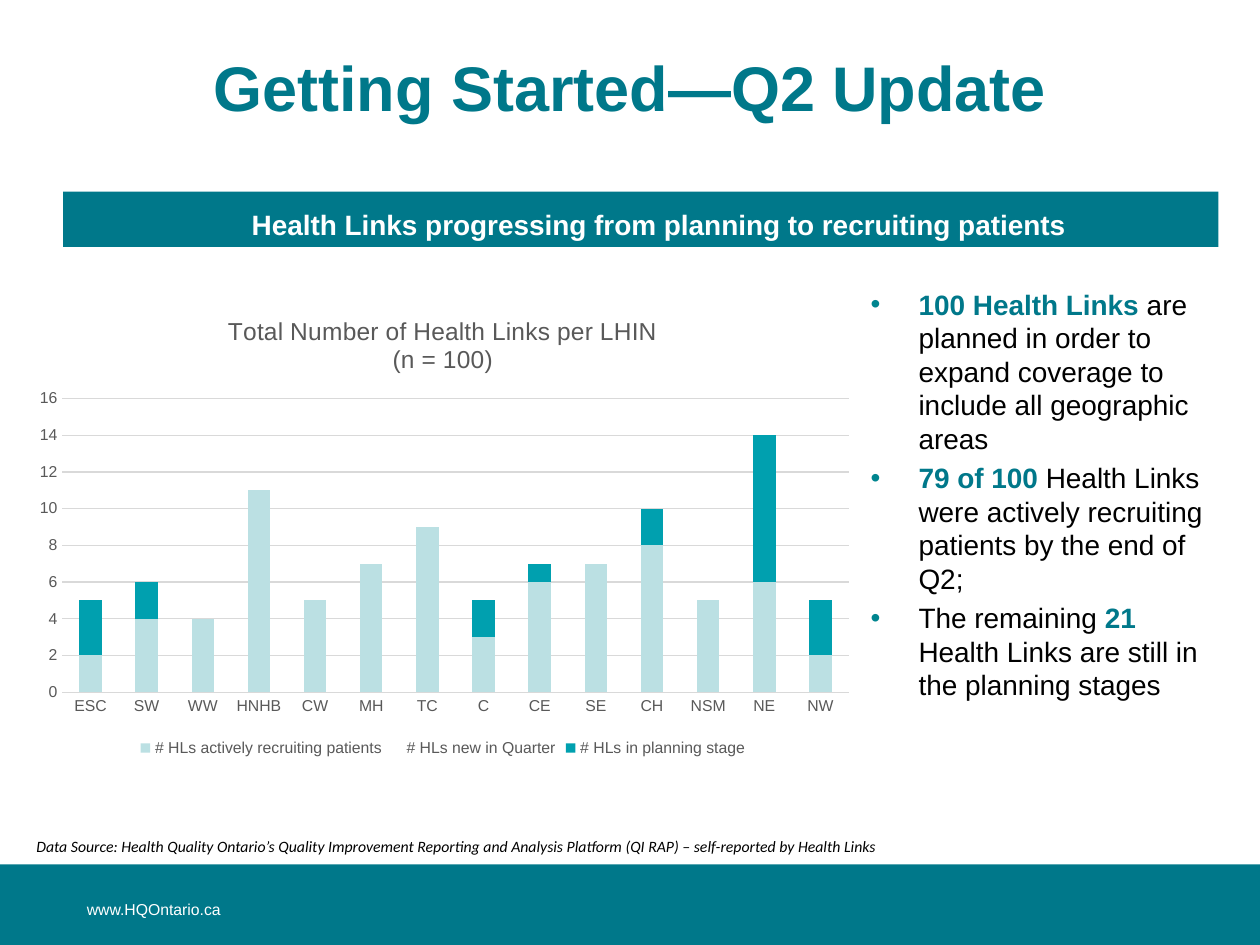
from lxml.etree import SubElement
from pptx import Presentation
from pptx.chart.data import CategoryChartData
from pptx.dml.color import RGBColor
from pptx.enum.chart import XL_CHART_TYPE, XL_LEGEND_POSITION, XL_TICK_MARK
from pptx.enum.shapes import MSO_SHAPE
from pptx.enum.text import MSO_ANCHOR, MSO_AUTO_SIZE, PP_ALIGN
from pptx.oxml.ns import qn
from pptx.util import Inches, Pt

HUES = {
    "teal": "00788A", "bullet": "00858F", "white": "FFFFFF", "black": "000000",
    "grey": "595959", "grid": "D9D9D9", "pale": "BBE0E3", "aqua": "00A0AF",
}
CATS = ["ESC", "SW", "WW", "HNHB", "CW", "MH", "TC",
        "C", "CE", "SE", "CH", "NSM", "NE", "NW"]
SERIES = [
    ("# HLs actively recruiting patients", "pale",
     [2, 4, 4, 11, 5, 7, 9, 3, 6, 7, 8, 5, 6, 2]),
    ("# HLs new in Quarter", "white", [None] * len(CATS)),
    ("# HLs in planning stage", "aqua",
     [3, 2, 0, 0, 0, 0, 0, 2, 1, 0, 2, 0, 8, 3]),
]
POINTS = [
    [("100 Health Links ", True),
     ("are planned in order to expand coverage to include all geographic areas", False)],
    [("79 of 100 ", True),
     ("Health Links were actively recruiting patients by the end of Q2;", False)],
    [("The remaining ", False), ("21 ", True),
     ("Health Links are still in the planning stages", False)],
]


def hue(name):
    return RGBColor.from_string(HUES[name])


class Deck:
    def __init__(self):
        self.show = Presentation()
        self.show.slide_width, self.show.slide_height = Inches(10), Inches(7.5)
        self.slide = self.show.slides.add_slide(self.show.slide_layouts[3])
        self.shapes = self.slide.shapes
        self.holders = self.slide.placeholders

    def style(self, font, size, color="black", **form):
        font.color.rgb = hue(color)
        for key, value in {"name": "Arial", "size": Pt(size), **form}.items():
            setattr(font, key, value)

    def words(self, para, text, size, color="black", **form):
        run = para.add_run()
        run.text = text
        self.style(run.font, size, color, **form)

    def place(self, idx, box, anchor, inset=0.1):
        holder = self.holders[idx]
        sides = ("left", "top", "width", "height")
        for key, value in zip(sides, box):
            setattr(holder, key, Inches(value))
        frame = holder.text_frame
        form = {"auto_size": MSO_AUTO_SIZE.NONE, "vertical_anchor": anchor,
                "margin_left": Inches(inset), "word_wrap": True}
        for key, value in form.items():
            setattr(frame, key, value)
        return holder

    def indent(self, para, left, mark=None):
        props = para._p.get_or_add_pPr()
        props.set("marL", str(Inches(left)))
        props.set("indent", str(-Inches(left)))
        if mark is None:
            SubElement(props, qn("a:buNone"))
            return
        tint = SubElement(props, qn("a:buClr"))
        SubElement(tint, qn("a:srgbClr"), val=HUES["bullet"])
        SubElement(props, qn("a:buFont"), typeface="Arial")
        SubElement(props, qn("a:buChar"), char=mark)

    def title(self, text, box):
        para = self.place(0, box, MSO_ANCHOR.MIDDLE).text_frame.paragraphs[0]
        para.alignment = PP_ALIGN.CENTER
        self.words(para, text, 36, "teal", bold=True)

    def banner(self, text, box):
        holder = self.place(1, box, MSO_ANCHOR.BOTTOM, 0.39)
        holder.fill.solid()
        holder.fill.fore_color.rgb = hue("teal")
        para = holder.text_frame.paragraphs[0]
        self.indent(para, 0)
        para.alignment, para.space_before = PP_ALIGN.CENTER, Pt(0)
        self.words(para, text, 16, "white", bold=True)

    def bullets(self, items, box):
        frame = self.place(2, box, MSO_ANCHOR.TOP, 0.39).text_frame
        for num, item in enumerate(items):
            para = frame.add_paragraph() if num else frame.paragraphs[0]
            self.indent(para, 0.38, "•")
            para.space_before = Pt(3.2 if num else 0)
            for text, key in item:
                self.words(para, text, 16, "teal" if key else "black", bold=key)

    def bar(self, box):
        shape = self.shapes.add_shape(MSO_SHAPE.RECTANGLE, *map(Inches, box))
        shape.shadow.inherit = False
        shape.fill.solid()
        shape.fill.fore_color.rgb = hue("teal")
        shape.line.fill.background()

    def label(self, text, box, color, wrap=True, **form):
        frame = self.shapes.add_textbox(*map(Inches, box)).text_frame
        frame.word_wrap = wrap
        frame.vertical_anchor = MSO_ANCHOR.MIDDLE
        self.words(frame.paragraphs[0], text, 9, color, **form)

    def chart(self, lines, box):
        data = CategoryChartData()
        data.categories = CATS
        for name, _, values in SERIES:
            data.add_series(name, values)
        chart = self.shapes.add_chart(
            XL_CHART_TYPE.COLUMN_STACKED, *map(Inches, box), data).chart
        self.style(chart.font, 10)
        chart.has_title = True
        frame = chart.chart_title.text_frame
        for num, line in enumerate(lines):
            para = frame.add_paragraph() if num else frame.paragraphs[0]
            self.words(para, line, 14, "grey", bold=False)
        chart.chart_title.include_in_layout = False
        chart.has_legend = True
        chart.legend.position = XL_LEGEND_POSITION.BOTTOM
        chart.legend.include_in_layout = False
        self.style(chart.legend.font, 9, "grey")
        plot = chart.plots[0]
        plot.gap_width, plot.overlap = 150, 100
        plot.vary_by_categories = False
        for series, (_, color, _) in zip(plot.series, SERIES):
            series.format.fill.solid()
            series.format.fill.fore_color.rgb = hue(color)
        self.axes(chart)
        self.layout(chart, {"x": 0.05, "y": 0.22, "w": 0.93, "h": 0.63})

    def axes(self, chart):
        cat, val = chart.category_axis, chart.value_axis
        for axis in (cat, val):
            axis.major_tick_mark = axis.minor_tick_mark = XL_TICK_MARK.NONE
            self.style(axis.tick_labels.font, 9, "grey")
        val.minimum_scale, val.maximum_scale, val.major_unit = 0, 16, 2
        val.format.line.fill.background()
        for line in (cat.format.line, val.major_gridlines.format.line):
            line.color.rgb, line.width = hue("grid"), Pt(0.75)

    def layout(self, chart, area):
        plot = chart._chartSpace.chart.plotArea
        for old in plot.findall(qn("c:layout")):
            plot.remove(old)
        node = SubElement(plot, qn("c:layout"))
        plot.insert(0, node)
        manual = SubElement(node, qn("c:manualLayout"))
        SubElement(manual, qn("c:layoutTarget"), val="inner")
        for key in "xy":
            SubElement(manual, qn(f"c:{key}Mode"), val="edge")
        for key, value in area.items():
            SubElement(manual, qn(f"c:{key}"), val=str(value))


def main():
    deck = Deck()
    deck.bar((0, 6.86, 10, 0.64))
    deck.title("Getting Started—Q2 Update", (0.5, 0.3, 9, 0.77))
    deck.banner("Health Links progressing from planning to recruiting patients",
                (0.5, 1.52, 9.17, 0.44))
    deck.label("www.HQOntario.ca", (0.59, 7.08, 3.08, 0.27), "white")
    deck.bullets(POINTS, (6.52, 2.23, 3.15, 3.82))
    deck.label("Data Source: Health Quality Ontario’s Quality Improvement Reporting "
               "and Analysis Platform (QI RAP) – self-reported by Health Links",
               (0.19, 6.59, 6.95, 0.25), "black", False, name="Calibri", italic=True)
    deck.chart(["Total Number of Health Links per LHIN", "(n = 100)"],
               (0.16, 2.35, 6.71, 3.7))
    deck.show.save("out.pptx")


if __name__ == "__main__":
    main()
